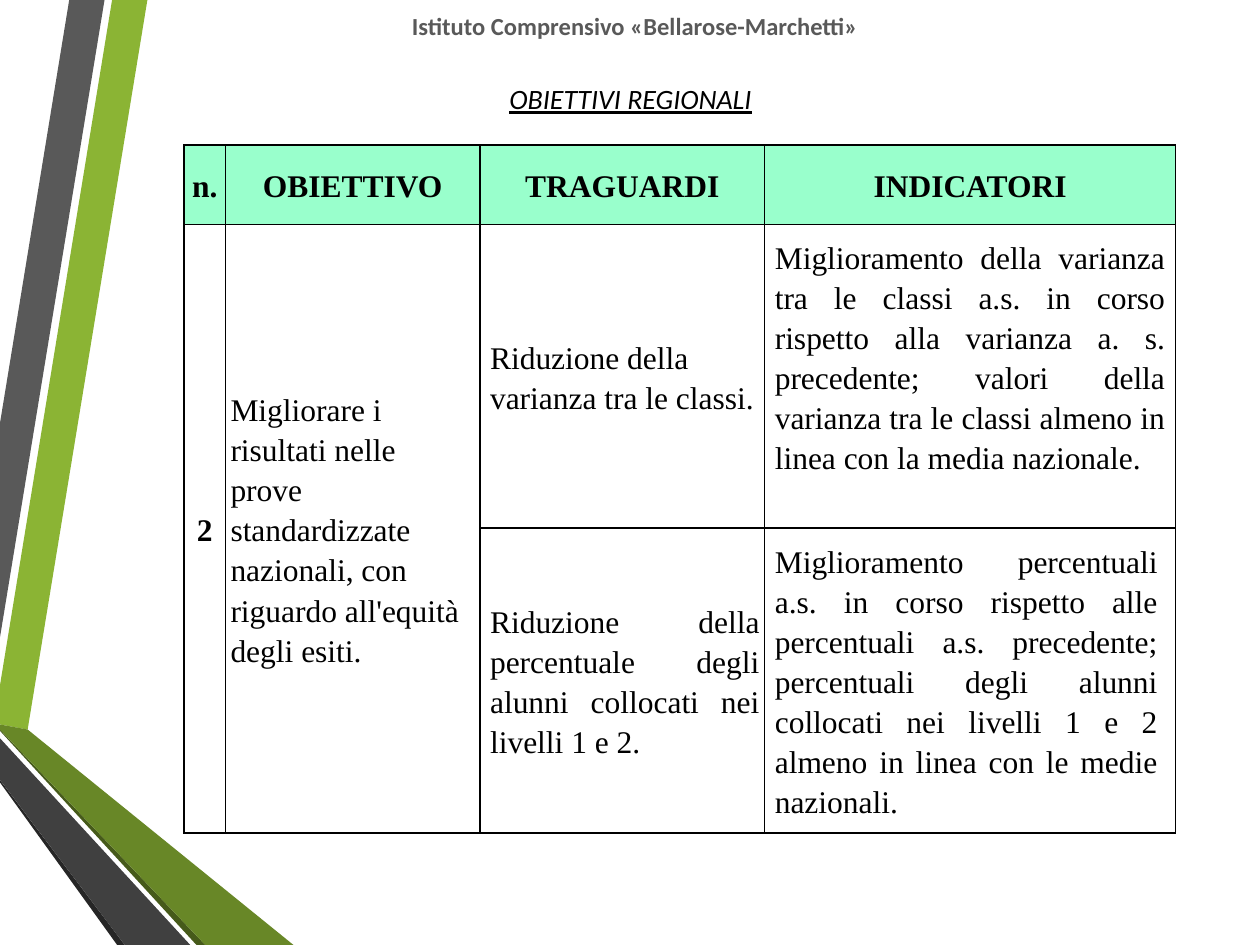
from lxml.etree import SubElement
from pptx import Presentation
from pptx.dml.color import RGBColor
from pptx.enum.text import MSO_ANCHOR, PP_ALIGN
from pptx.oxml.ns import qn
from pptx.util import Inches, Pt

COLORS = {
    "lime": "8BB434", "green": "688727", "dark green": "465A1A",
    "gray": "595959", "dark gray": "404040", "charcoal": "262626",
    "mint": "99FFCC", "white": "FFFFFF", "black": "000000",
}
RIBBONS = [
    ("lime", [(0, 5.44), (0, 5.75), (0.22, 5.79), (1.17, 0), (0.89, 0)]),
    ("gray", [(0.83, 0), (0.55, 0), (0, 3.36), (0, 5.06)]),
    ("charcoal", [(0, 6.19), (0, 6.21), (0.93, 7.5), (0.99, 7.5)]),
    ("dark green", [(0, 5.79), (0, 5.8), (1.56, 7.5), (1.63, 7.5)]),
    ("green", [(0, 5.79), (1.63, 7.5), (2.33, 7.5), (0.22, 5.79), (0, 5.75)]),
    ("dark gray", [(0, 6.19), (0.99, 7.5), (1.51, 7.5), (0, 5.86)]),
]
HEADERS = ["n.", "OBIETTIVO", "TRAGUARDI", "INDICATORI"]
OBJECTIVE = ("Migliorare i risultati nelle prove standardizzate nazionali, "
             "con riguardo all'equità degli esiti.")
TARGETS = [
    "Riduzione della varianza tra le classi.",
    "Riduzione della percentuale degli alunni collocati nei livelli 1 e 2.",
]
INDICATORS = [
    "Miglioramento della varianza tra le classi a.s. in corso rispetto alla "
    "varianza a. s. precedente; valori della varianza tra le classi almeno in "
    "linea con la media nazionale.",
    "Miglioramento percentuali a.s. in corso rispetto alle percentuali a.s. "
    "precedente; percentuali degli alunni collocati nei livelli 1 e 2 almeno "
    "in linea con le medie nazionali.",
]
COLUMN_WIDTHS = [0.33, 2.02, 2.26, 3.26]
ROW_HEIGHTS = [0.63, 2.41, 2.42]


def color(name):
    return RGBColor.from_string(COLORS[name])


def write_text(frame, text, size=18, font="Times New Roman", fill="black", bold=False,
               italic=False, underline=False, align=PP_ALIGN.LEFT, spacing=None):
    frame.word_wrap = True
    paragraph = frame.paragraphs[0]
    paragraph.alignment = align
    paragraph.line_spacing = spacing
    run = paragraph.add_run()
    run.text = text
    run.font.name = font
    run.font.size = Pt(size)
    run.font.bold = bold
    run.font.italic = italic
    run.font.underline = underline
    run.font.color.rgb = color(fill)


def add_ribbons(slide, left, top):
    for fill, points in RIBBONS:
        corners = [(left + Inches(x), top + Inches(y)) for x, y in points]
        builder = slide.shapes.build_freeform(*corners[0])
        builder.add_line_segments(corners[1:], close=True)
        shape = builder.convert_to_shape()
        shape.shadow.inherit = False
        shape.fill.solid()
        shape.fill.fore_color.rgb = color(fill)
        shape.line.fill.background()


def add_heading(slide, left, top, width, height, text, **text_format):
    box = slide.shapes.add_textbox(left, top, width, height)
    write_text(box.text_frame, text, font="Calibri", align=PP_ALIGN.CENTER, **text_format)


def add_borders(cell):
    properties = cell._tc.get_or_add_tcPr()
    for position, side in enumerate(("a:lnL", "a:lnR", "a:lnT", "a:lnB")):
        line = SubElement(properties, qn(side), w=str(Pt(1)))
        properties.insert(position, line)
        fill = SubElement(line, qn("a:solidFill"))
        SubElement(fill, qn("a:srgbClr"), val=COLORS["black"])


def fill_cell(cell, text, left=0.04, right=0.04, bottom=0, **text_format):
    cell.vertical_anchor = MSO_ANCHOR.MIDDLE
    cell.margin_left, cell.margin_right = Inches(left), Inches(right)
    cell.margin_top, cell.margin_bottom = 0, Inches(bottom)
    write_text(cell.text_frame, text, spacing=1.15, **text_format)


def add_objectives_table(slide, left, top, width, height):
    frame = slide.shapes.add_table(len(ROW_HEIGHTS), len(COLUMN_WIDTHS),
                                   left, top, width, height)
    table = frame.table
    for column, column_width in zip(table.columns, COLUMN_WIDTHS):
        column.width = Inches(column_width)
    for row, row_height in zip(table.rows, ROW_HEIGHTS):
        row.height = Inches(row_height)
    for row_index, row in enumerate(table.rows):
        for cell in row.cells:
            cell.fill.solid()
            cell.fill.fore_color.rgb = color("white" if row_index else "mint")
            add_borders(cell)
    for column_index in (0, 1):
        table.cell(1, column_index).merge(table.cell(2, column_index))

    for column_index, header in enumerate(HEADERS):
        fill_cell(table.cell(0, column_index), header, bold=True, align=PP_ALIGN.CENTER)
    fill_cell(table.cell(1, 0), "2", bold=True, align=PP_ALIGN.CENTER)
    fill_cell(table.cell(1, 1), OBJECTIVE)
    fill_cell(table.cell(1, 2), TARGETS[0], left=0.08)
    fill_cell(table.cell(2, 2), TARGETS[1], left=0.08, align=PP_ALIGN.JUSTIFY)
    fill_cell(table.cell(1, 3), INDICATORS[0], left=0.08, right=0.08, bottom=0.32,
              align=PP_ALIGN.JUSTIFY)
    fill_cell(table.cell(2, 3), INDICATORS[1], left=0.08, right=0.14,
              align=PP_ALIGN.JUSTIFY)


def main():
    presentation = Presentation()
    presentation.slide_width, presentation.slide_height = Inches(10), Inches(7.5)
    slide = presentation.slides.add_slide(presentation.slide_layouts[6])
    add_ribbons(slide, Inches(0), Inches(0))
    add_heading(slide, Inches(0.91), Inches(0.6), Inches(8.19), Inches(0.37),
                "OBIETTIVI REGIONALI", size=16, italic=True, underline=True)
    add_heading(slide, Inches(1.14), Inches(0.04), Inches(7.8), Inches(0.34),
                "Istituto Comprensivo «Bellarose-Marchetti»",
                size=14, bold=True, fill="gray")
    add_objectives_table(slide, Inches(1.46), Inches(1.15), Inches(7.87), Inches(5.46))
    presentation.save("out.pptx")


if __name__ == "__main__":
    main()
